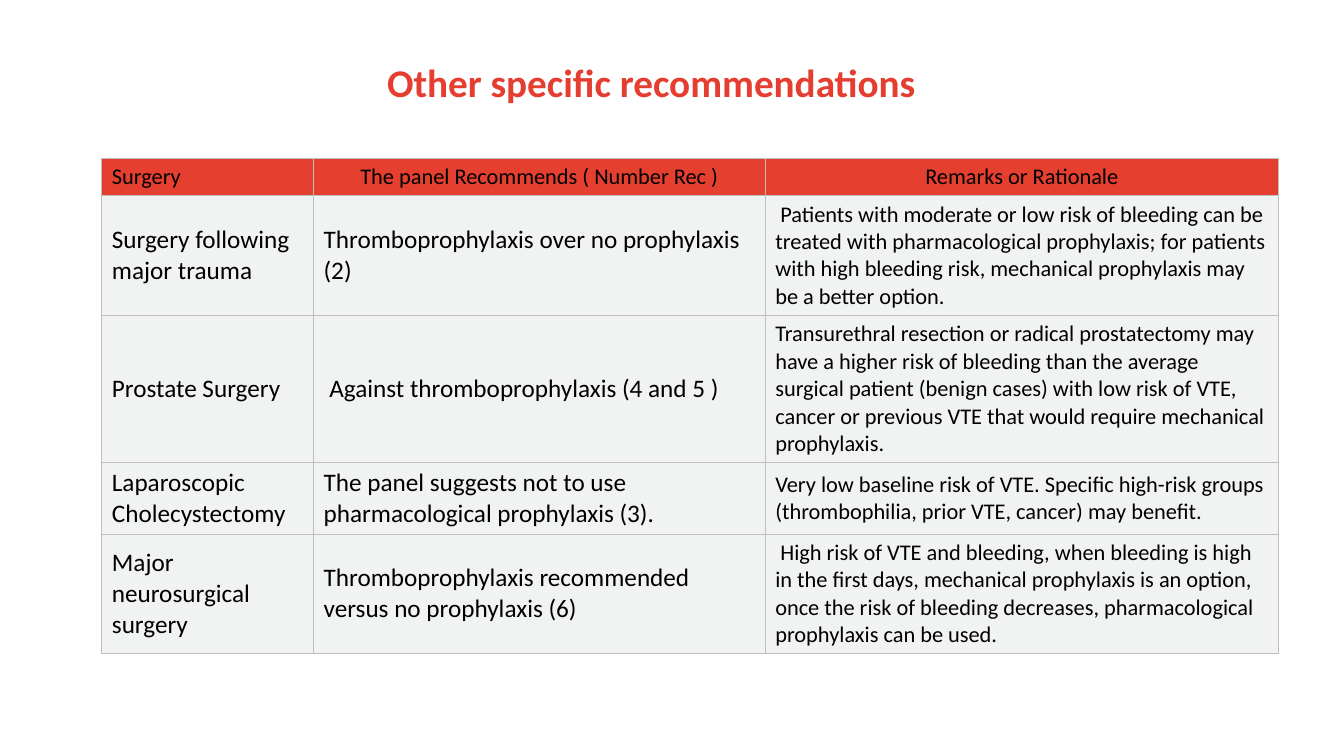
"""Build a slide with a table of surgery-specific thromboprophylaxis recommendations."""
import dataclasses

import lxml.etree
import pptx
import pptx.dml.color
import pptx.enum.text
import pptx.oxml.ns
import pptx.util

PX = 9144


@dataclasses.dataclass(frozen=True)
class Theme:
    """Colours, font and type sizes of the slide."""
    font: str = "Calibri"
    title: str = "E53E31"
    header: str = "E53F2F"
    body: str = "F1F3F2"
    border: str = "BFBFBF"
    text: str = "000000"
    title_size: int = 28
    large_size: int = 18
    small_size: int = 16


THEME = Theme()
TITLE = "Other specific recommendations"
COLUMN_WIDTHS = (210, 448, 509)
ROW_HEIGHTS = (37, 119, 146, 71, 118)
RECOMMENDATIONS = (
    ("Surgery", "The panel Recommends ( Number Rec )", "Remarks or Rationale"),
    ("Surgery following major trauma",
     "Thromboprophylaxis over no prophylaxis (2)",
     " Patients with moderate or low risk of bleeding can be treated with "
     "pharmacological prophylaxis; for patients with high bleeding risk, "
     "mechanical prophylaxis may be a better option."),
    ("Prostate Surgery",
     " Against thromboprophylaxis (4 and 5 )",
     "Transurethral resection or radical prostatectomy may have a higher risk "
     "of bleeding than the average surgical patient (benign cases) with low "
     "risk of VTE, cancer or previous VTE that would require mechanical prophylaxis."),
    ("Laparoscopic Cholecystectomy",
     "The panel suggests not to use pharmacological prophylaxis (3).",
     "Very low baseline risk of VTE. Specific high-risk groups (thrombophilia, "
     "prior VTE, cancer) may benefit."),
    ("Major neurosurgical surgery",
     "Thromboprophylaxis recommended versus no prophylaxis (6)",
     " High risk of VTE and bleeding, when bleeding is high in the first days, "
     "mechanical prophylaxis is an option, once the risk of bleeding decreases, "
     "pharmacological prophylaxis can be used."),
)


def px(length):
    """Turn whole pixels into EMU."""
    return pptx.util.Emu(length * PX)


def write(frame, words, size, color, bold=False, centred=False):
    """Put one formatted paragraph into a text frame."""
    frame.text = words
    paragraph = frame.paragraphs[0]
    align = pptx.enum.text.PP_ALIGN
    paragraph.alignment = align.CENTER if centred else align.LEFT
    for run in paragraph.runs:
        run.font.name = THEME.font
        run.font.size = pptx.util.Pt(size)
        run.font.bold = bold
        run.font.color.rgb = pptx.dml.color.RGBColor.from_string(color)


def add_title(slide, words, left, top, width, height):
    """Add the slide heading."""
    heading = slide.shapes.add_textbox(px(left), px(top), px(width), px(height))
    heading.text_frame.word_wrap = True
    write(heading.text_frame, words, THEME.title_size, THEME.title, bold=True)


def outline(cell):
    """Draw a thin border on all four sides of a cell."""
    properties = cell._tc.get_or_add_tcPr()
    qn = pptx.oxml.ns.qn
    for side in ("a:lnL", "a:lnR", "a:lnT", "a:lnB"):
        line = lxml.etree.SubElement(properties, qn(side), w=str(pptx.util.Pt(1)))
        fill = lxml.etree.SubElement(line, qn("a:solidFill"))
        lxml.etree.SubElement(fill, qn("a:srgbClr"), val=THEME.border)


def fill_cell(cell, words, is_header, column):
    """Write and style one cell according to its row and column."""
    outline(cell)
    cell.fill.solid()
    cell.fill.fore_color.rgb = pptx.dml.color.RGBColor.from_string(
        THEME.header if is_header else THEME.body)
    cell.vertical_anchor = pptx.enum.text.MSO_ANCHOR.MIDDLE
    is_small = is_header or column == 2
    write(cell.text_frame, words, THEME.small_size if is_small else THEME.large_size,
          THEME.text, centred=is_header and column > 0)


def add_recommendations(slide, left, top):
    """Add the recommendations table."""
    table = slide.shapes.add_table(
        len(ROW_HEIGHTS), len(COLUMN_WIDTHS), px(left), px(top),
        px(sum(COLUMN_WIDTHS)), px(sum(ROW_HEIGHTS))).table
    table.horz_banding = False
    table.first_row = False
    for column, width in zip(table.columns, COLUMN_WIDTHS):
        column.width = px(width)
    for row, height in zip(table.rows, ROW_HEIGHTS):
        row.height = px(height)
    for row_index, entries in enumerate(RECOMMENDATIONS):
        for column_index, words in enumerate(entries):
            fill_cell(table.cell(row_index, column_index), words,
                      row_index == 0, column_index)


def main():
    """Build and save the slide."""
    deck = pptx.Presentation()
    deck.slide_width, deck.slide_height = px(1333), px(750)
    slide = deck.slides.add_slide(deck.slide_layouts[6])
    add_title(slide, TITLE, 374, 53, 705, 78)
    add_recommendations(slide, 101, 157)
    deck.save("out.pptx")


if __name__ == "__main__":
    main()
